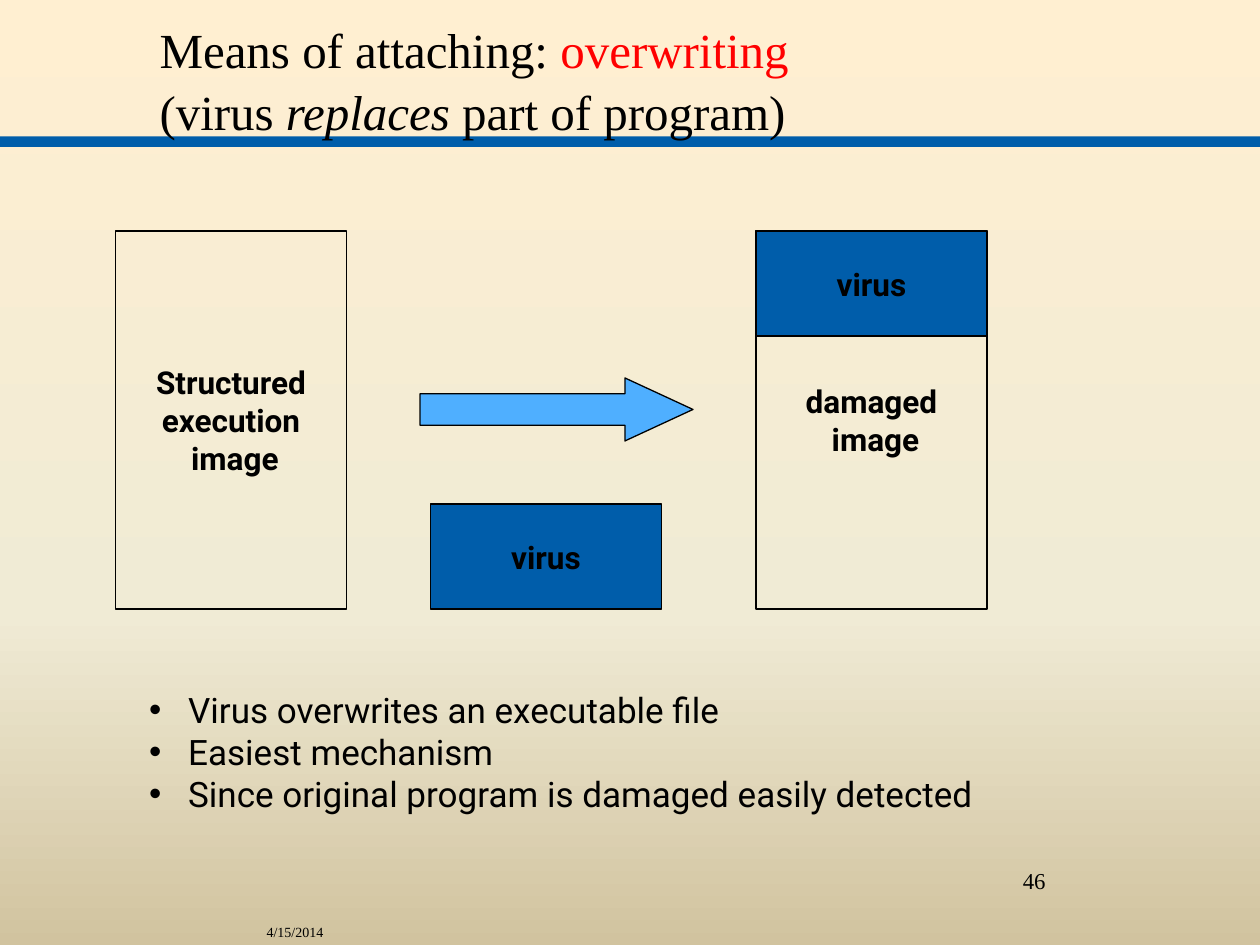
from copy import deepcopy
from dataclasses import dataclass

from lxml.etree import SubElement
from pptx import Presentation
from pptx.dml.color import RGBColor
from pptx.enum.shapes import MSO_SHAPE
from pptx.enum.text import MSO_ANCHOR, PP_ALIGN
from pptx.oxml.ns import qn
from pptx.util import Inches, Pt


@dataclass(frozen=True)
class Theme:
    serif: str = "Times New Roman"
    sans: str = "Roboto"
    ink: str = "000000"
    accent: str = "FF0000"
    virus: str = "005DAA"
    arrow: str = "4FAFFF"
    background: tuple = ((0, "FFEFD1"), (0.65, "F0EBD5"), (1, "D1C39F"))
    title_size: int = 28
    list_size: int = 20
    label_size: int = 18
    number_size: int = 13
    date_size: int = 8
    line_width: float = 0.75


THEME = Theme()
CELL = Inches(1) / 12
COLUMNS, ROWS = 120, 90


def cells(*counts):
    return [round(count * CELL) for count in counts]


def place(shape, box):
    shape.left, shape.top, shape.width, shape.height = cells(*box)


def add_run(paragraph, text, size, font, color=THEME.ink, bold=False, italic=False):
    run = paragraph.add_run()
    run.text = text
    run.font.size = Pt(size)
    run.font.name = font
    run.font.bold = bold
    run.font.italic = italic
    run.font.color.rgb = RGBColor.from_string(color)


def add_block(slide, box, kind=MSO_SHAPE.RECTANGLE, fill=None, outlined=True):
    shape = slide.shapes.add_shape(kind, *cells(*box))
    shape.shadow.inherit = False
    if fill:
        shape.fill.solid()
        shape.fill.fore_color.rgb = RGBColor.from_string(fill)
    else:
        shape.fill.background()
    if outlined:
        shape.line.color.rgb = RGBColor.from_string(THEME.ink)
        shape.line.width = Pt(THEME.line_width)
    else:
        shape.line.fill.background()
    return shape


def add_labelled_block(slide, box, paragraphs, fill=None):
    frame = add_block(slide, box, fill=fill).text_frame
    frame.word_wrap = False
    frame.vertical_anchor = MSO_ANCHOR.MIDDLE
    for index, lines in enumerate(paragraphs):
        paragraph = frame.add_paragraph() if index else frame.paragraphs[0]
        paragraph.alignment = PP_ALIGN.CENTER
        for number, line in enumerate(lines):
            if number:
                paragraph.add_line_break()
            add_run(paragraph, line, THEME.label_size, THEME.sans, bold=True)


def paint_background(slide):
    fill = slide.background.fill
    fill.gradient()
    fill.gradient_angle = 270
    stop_list = slide.element.xpath(".//p:bg//a:gsLst")[0]
    stop_list.append(deepcopy(stop_list[-1]))
    for stop, (position, color) in zip(fill.gradient_stops, THEME.background):
        stop.position = position
        stop.color.rgb = RGBColor.from_string(color)


def build_header(slide, box):
    left, top, width, height = box
    rule = add_block(slide, (0, top + height - 2, COLUMNS, 1), fill=THEME.virus, outlined=False)
    rule.element.getparent().insert(2, rule.element)

    title = slide.shapes.title
    place(title, box)
    title.text_frame.word_wrap = True
    title.text_frame.vertical_anchor = MSO_ANCHOR.MIDDLE
    paragraph = title.text_frame.paragraphs[0]
    paragraph.alignment = PP_ALIGN.LEFT
    paragraph.line_spacing = 1.05
    style = (THEME.title_size, THEME.serif)
    add_run(paragraph, "Means of attaching: ", *style)
    add_run(paragraph, "overwriting", *style, color=THEME.accent)
    paragraph.add_line_break()
    add_run(paragraph, "(virus ", *style)
    add_run(paragraph, "replaces", *style, italic=True)
    add_run(paragraph, " part of program)", *style)


def build_diagram(slide, box):
    left, top, width, height = box
    block_width, virus_height = 22, 10
    damaged_left = left + width - block_width
    virus_top = top + height - virus_height
    virus = [["virus"]]

    add_labelled_block(slide, (left + 30, virus_top, block_width, virus_height), virus, THEME.virus)
    add_labelled_block(slide, (left, top, block_width, height),
                       [["Structured", "execution", " image"]])
    add_labelled_block(slide, (damaged_left, top, block_width, height),
                       [["damaged"], [" image"]])
    add_labelled_block(slide, (damaged_left, top, block_width, virus_height), virus, THEME.virus)

    arrow = add_block(slide, (left + 29, top + 14, 26, 6), MSO_SHAPE.RIGHT_ARROW, THEME.arrow)
    arrow.adjustments[0] = 0.5
    arrow.adjustments[1] = 1.08


def build_list(slide, box, items):
    body = slide.placeholders[1]
    place(body, box)
    frame = body.text_frame
    frame.word_wrap = True
    frame.vertical_anchor = MSO_ANCHOR.TOP
    for index, item in enumerate(items):
        paragraph = frame.add_paragraph() if index else frame.paragraphs[0]
        paragraph.space_before = Pt(0)
        properties = paragraph._p.get_or_add_pPr()
        properties.set("marL", str(Inches(0.31)))
        properties.set("indent", str(-Inches(0.31)))
        SubElement(properties, qn("a:buFont")).set("typeface", "Arial")
        SubElement(properties, qn("a:buChar")).set("char", "•")
        add_run(paragraph, item, THEME.list_size, THEME.sans)


def build_footer_text(slide, box, text, size, alignment):
    frame = slide.shapes.add_textbox(*cells(*box)).text_frame
    frame.word_wrap = True
    paragraph = frame.paragraphs[0]
    paragraph.alignment = alignment
    add_run(paragraph, text, size, THEME.serif)


def main():
    presentation = Presentation()
    presentation.slide_width, presentation.slide_height = cells(COLUMNS, ROWS)
    slide = presentation.slides.add_slide(presentation.slide_layouts[1])
    paint_background(slide)
    build_header(slide, (14, 0, 97, 15))
    build_diagram(slide, (11, 22, 83, 36))
    build_list(slide, (13, 65, 96, 21), (
        "Virus overwrites an executable file",
        "Easiest mechanism",
        "Since original program is damaged easily detected",
    ))
    build_footer_text(slide, (8, 87.4, 24, 2), "4/15/2014", THEME.date_size, PP_ALIGN.RIGHT)
    build_footer_text(slide, (86, 82, 25, 6), "46", THEME.number_size, PP_ALIGN.CENTER)
    presentation.save("out.pptx")


if __name__ == "__main__":
    main()
